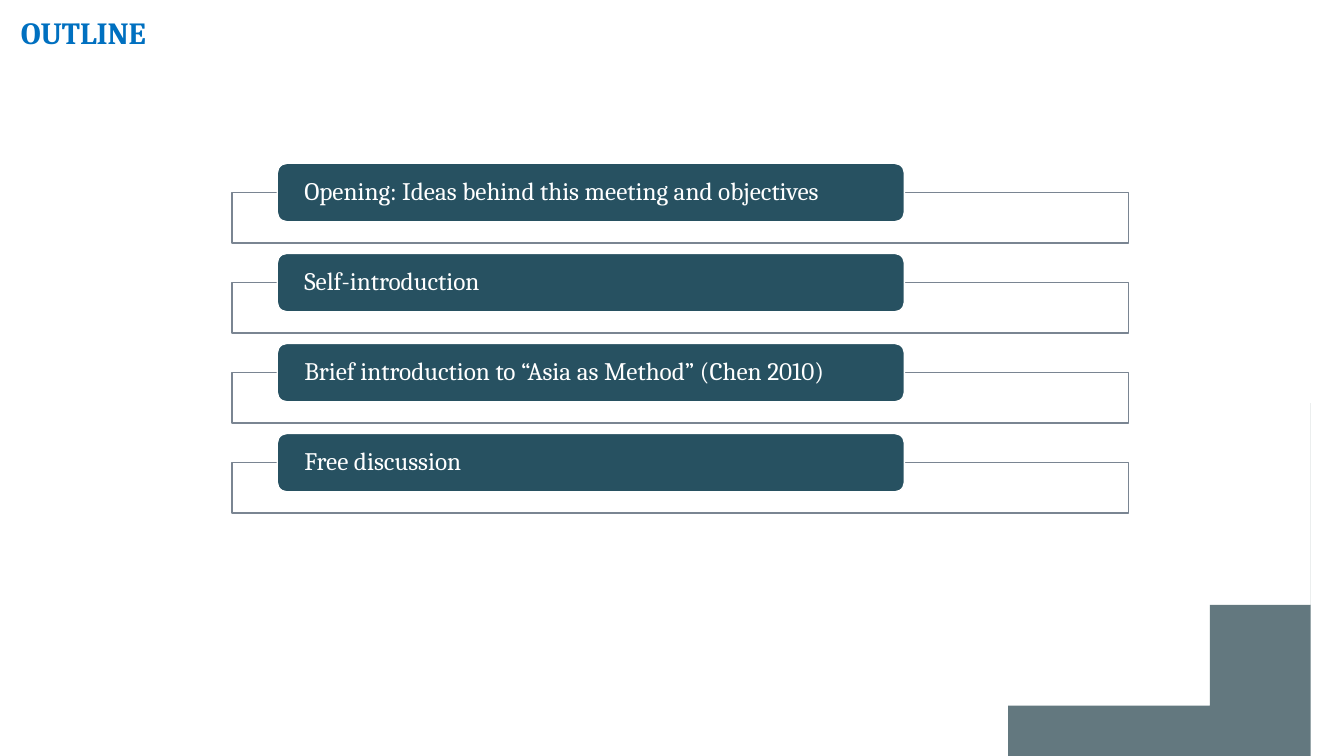
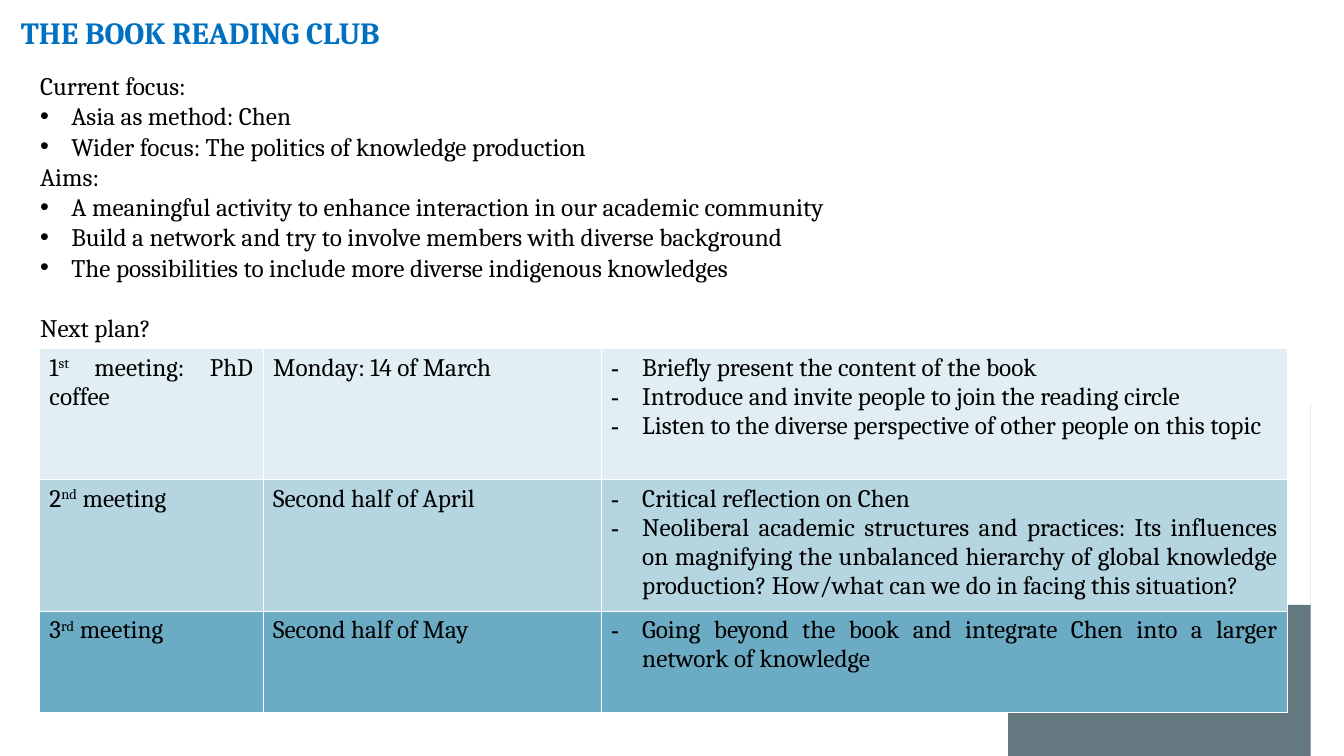
from lxml import etree
from pptx import Presentation
from pptx.dml.color import RGBColor
from pptx.enum.shapes import MSO_SHAPE as Shape
from pptx.enum.text import MSO_ANCHOR as Anchor, MSO_AUTO_SIZE as AutoSize, PP_ALIGN as Align
from pptx.oxml.ns import qn
from pptx.util import Inches, Pt

FONT = "Cambria"
BODY_SIZE = 18
BULLET_INDENT = Inches(0.31)
COLORS = {
    "title": "0070C0",
    "text": "000000",
    "white": "FFFFFF",
    "corner": "63787F",
    "bar": "275161",
    "frame": "7A8592",
    "row 1": "E1EEF3",
    "row 2": "B5D5E1",
    "row 3": "6BABC3",
}

TOPICS = [
    "Opening: Ideas behind this meeting and objectives",
    "Self-introduction",
    "Brief introduction to “Asia as Method” (Chen 2010)",
    "Free discussion",
]
SECTIONS = [
    ("Current focus:", [
        "Asia as method: Chen",
        "Wider focus: The politics of knowledge production",
    ]),
    ("Aims:", [
        "A meaningful activity to enhance interaction in our academic community",
        "Build a network and try to involve members with diverse background",
        "The possibilities to include more diverse indigenous knowledges",
    ]),
    ("Next plan?", []),
]
MEETINGS = [
    (("1", "st", " meeting: PhD coffee"), "Monday: 14 of March", [
        "Briefly present the content of the book",
        "Introduce and invite people to join the reading circle",
        "Listen to the diverse perspective of other people on this topic",
    ]),
    (("2", "nd", " meeting"), "Second half of April", [
        "Critical reflection on Chen",
        "Neoliberal academic structures and practices: Its influences on magnifying "
        "the unbalanced hierarchy of global knowledge production? "
        "How/what can we do in facing this situation?",
    ]),
    (("3", "rd", " meeting"), "Second half of May", [
        "Going beyond the book and integrate Chen into a larger network of knowledge",
    ]),
]
COLUMN_WIDTHS = [2.22, 3.35, 6.81]
ROW_HEIGHTS = [1.3, 1.3, 1.01]


def color(name):
    return RGBColor.from_string(COLORS[name])


def style_font(para, size=BODY_SIZE, color_name="text", bold=False):
    para.font.name = FONT
    para.font.size = Pt(size)
    para.font.bold = bold
    para.font.color.rgb = color(color_name)


def paint(shape, fill, line=None):
    shape.shadow.inherit = False
    shape.fill.solid()
    shape.fill.fore_color.rgb = color(fill)
    if line:
        shape.line.color.rgb = color(line)
        shape.line.width = Pt(1)
    else:
        shape.line.fill.background()


def next_paragraph(frame):
    first = frame.paragraphs[0]
    return frame.add_paragraph() if first.runs else first


def add_text(frame, text, bullet=None, align=Align.LEFT):
    para = next_paragraph(frame)
    para.alignment = align
    if bullet:
        properties = para._p.get_or_add_pPr()
        properties.set("marL", str(BULLET_INDENT))
        properties.set("indent", str(-BULLET_INDENT))
        etree.SubElement(properties, qn("a:buFont"), typeface="Arial")
        etree.SubElement(properties, qn("a:buChar"), char=bullet)
    style_font(para)
    para.add_run().text = text
    return para


def add_text_box(slide, left, top, width, height):
    box = slide.shapes.add_textbox(Inches(left), Inches(top), Inches(width), Inches(height))
    box.text_frame.word_wrap = True
    box.text_frame.auto_size = AutoSize.SHAPE_TO_FIT_TEXT
    return box.text_frame


def add_title(slide, text):
    para = add_text(add_text_box(slide, 0.11, 0, 4.74, 0.53), text, align=Align.JUSTIFY)
    para.line_spacing = 1.25
    style_font(para, 22, "title", bold=True)


def curve_points(start, first_control, second_control, end, steps=48):
    for step in range(steps + 1):
        t = step / steps
        weights = ((1 - t) ** 3, 3 * t * (1 - t) ** 2, 3 * t * t * (1 - t), t ** 3)
        yield tuple(
            sum(weight * value for weight, value in zip(weights, values))
            for values in zip(start, first_control, second_control, end)
        )


def add_corner_to_layout(layout, slide):
    builder = slide.shapes.build_freeform(13.33, 3.78, scale=Inches(1))
    arc = curve_points((9.71, 7.5), (11.67, 7.41), (13.23, 5.87), (13.33, 3.96))
    builder.add_line_segments([(13.33, 7.5), (9.63, 7.5), *arc])
    corner = builder.convert_to_shape()
    paint(corner, "corner")
    corner.element.nvSpPr.cNvPr.id = 20
    layout.shapes.element.append(corner.element)


def add_topic(slide, top, text):
    frame = slide.shapes.add_shape(
        Shape.RECTANGLE, Inches(2.3), Inches(top + 0.29), Inches(8.89), Inches(0.5))
    paint(frame, "white", "frame")
    bar = slide.shapes.add_shape(
        Shape.ROUNDED_RECTANGLE, Inches(2.75), Inches(top), Inches(6.22), Inches(0.58))
    paint(bar, "bar", "white")
    content = bar.text_frame
    content.word_wrap = True
    content.vertical_anchor = Anchor.MIDDLE
    content.margin_left = content.margin_right = Inches(0.24)
    content.margin_top = content.margin_bottom = 0
    para = add_text(content, text)
    para.line_spacing = 0.9
    style_font(para, color_name="white")


def style_cell(cell, fill):
    properties = cell._tc.get_or_add_tcPr()
    for side in ("a:lnL", "a:lnR", "a:lnT", "a:lnB"):
        border = etree.SubElement(properties, qn(side), w=str(Pt(0.6)))
        solid = etree.SubElement(border, qn("a:solidFill"))
        etree.SubElement(solid, qn("a:srgbClr"), val=COLORS["white"])
    cell.fill.solid()
    cell.fill.fore_color.rgb = color(fill)


def add_meeting_name(frame, number, ordinal, rest):
    para = add_text(frame, number, align=Align.JUSTIFY)
    span = para.add_run()
    span.text = ordinal
    span._r.get_or_add_rPr().set("baseline", "30000")
    para.add_run().text = rest


def add_meeting_table(slide):
    table = slide.shapes.add_table(
        len(MEETINGS), len(COLUMN_WIDTHS), Inches(0.39), Inches(3.46),
        Inches(sum(COLUMN_WIDTHS)), Inches(sum(ROW_HEIGHTS))).table
    table.first_row = table.horz_banding = False
    for column, width in zip(table.columns, COLUMN_WIDTHS):
        column.width = Inches(width)
    for index, (name, date, activities) in enumerate(MEETINGS):
        row = table.rows[index]
        row.height = Inches(ROW_HEIGHTS[index])
        for cell in row.cells:
            style_cell(cell, f"row {index + 1}")
        name_frame, date_frame, plan_frame = (cell.text_frame for cell in row.cells)
        add_meeting_name(name_frame, *name)
        add_text(date_frame, date, align=Align.JUSTIFY)
        for activity in activities:
            add_text(plan_frame, activity, "-", Align.JUSTIFY)


def fill_outline(slide):
    add_title(slide, "OUTLINE")
    first_top, last_top = 1.62, 4.3
    step = (last_top - first_top) / (len(TOPICS) - 1)
    for index, topic in enumerate(TOPICS):
        add_topic(slide, first_top + index * step, topic)


def fill_reading_club(slide):
    frame = add_text_box(slide, 0.3, 0.65, 11.72, 3.43)
    for heading, points in SECTIONS:
        heading_para = add_text(frame, heading)
        for point in points:
            add_text(frame, point, "•")
    heading_para.space_before = Pt(21.6)
    add_title(slide, "THE BOOK READING CLUB")
    add_meeting_table(slide)


def main():
    deck = Presentation()
    deck.slide_width = Inches(13.33)
    deck.slide_height = Inches(7.5)
    blank = deck.slide_layouts[6]
    outline = deck.slides.add_slide(blank)
    add_corner_to_layout(blank, outline)
    fill_outline(outline)
    fill_reading_club(deck.slides.add_slide(blank))
    deck.save("out.pptx")


if __name__ == "__main__":
    main()
